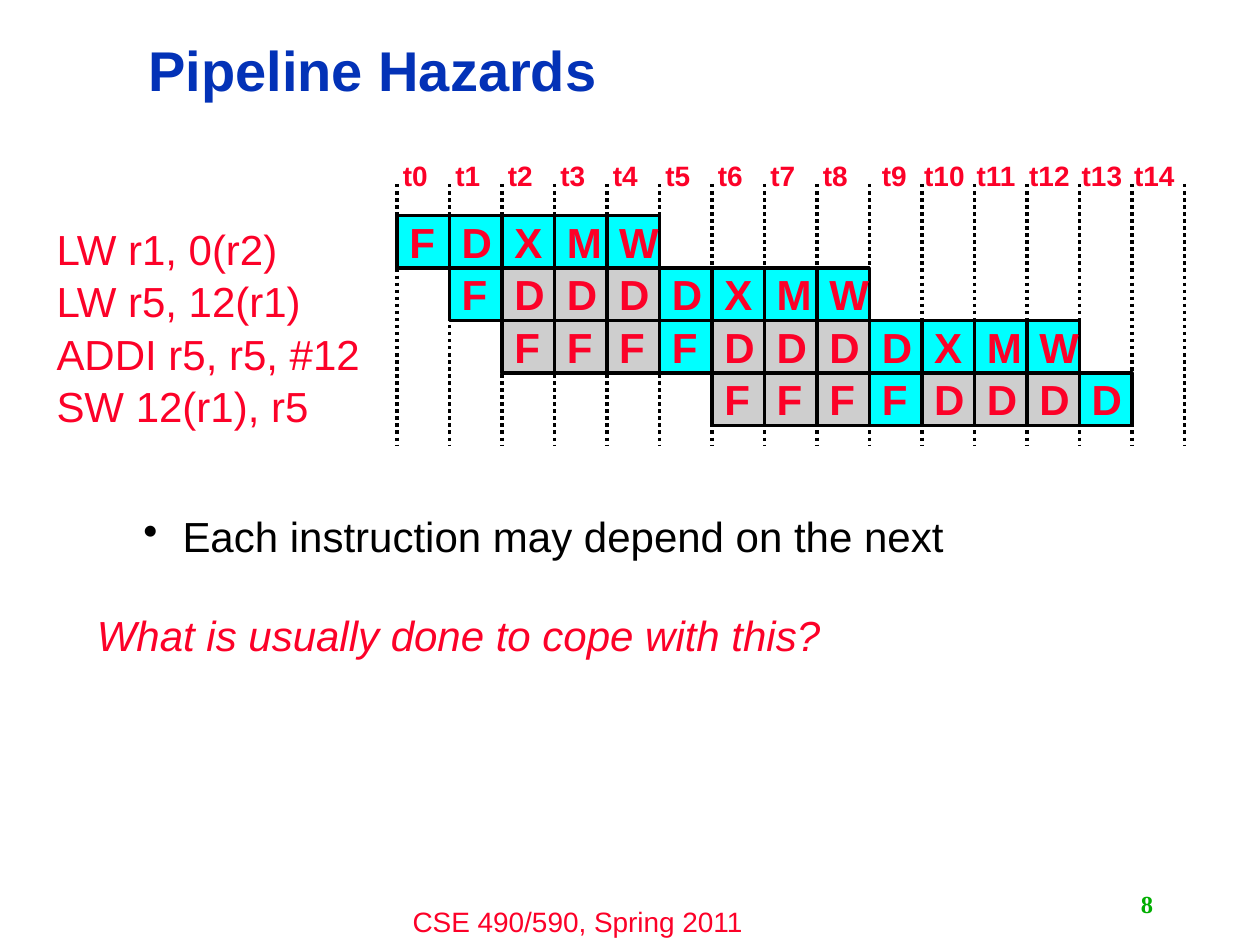
from pptx import Presentation
from pptx.dml.color import RGBColor
from pptx.enum.dml import MSO_LINE
from pptx.enum.shapes import MSO_CONNECTOR, MSO_SHAPE
from pptx.enum.text import MSO_ANCHOR, PP_ALIGN
from pptx.oxml.ns import qn
from pptx.util import Inches, Pt
from lxml import etree

RED = RGBColor(0xFC, 0x01, 0x28)
BLUE = RGBColor(0x03, 0x32, 0xB7)
GREEN = RGBColor(0x00, 0xAE, 0x00)
BLACK = RGBColor(0x00, 0x00, 0x00)
CYAN = RGBColor(0x00, 0xFF, 0xFF)
GREY = RGBColor(0xCE, 0xCE, 0xCE)

DOTTED = MSO_LINE.ROUND_DOT
STRAIGHT = MSO_CONNECTOR.STRAIGHT
RECTANGLE = MSO_SHAPE.RECTANGLE
TOP, MIDDLE = MSO_ANCHOR.TOP, MSO_ANCHOR.MIDDLE
LEFT, CENTER, RIGHT = PP_ALIGN.LEFT, PP_ALIGN.CENTER, PP_ALIGN.RIGHT

CELL = 5 / 12
CYCLES = 15
# Instruction, first cycle, and the stage it occupies in each cycle
PIPELINE = [
    ("LW r1, 0(r2)", 0, "FDXMW"),
    ("LW r5, 12(r1)", 1, "FDDDDXMW"),
    ("ADDI r5, r5, #12", 2, "FFFFDDDDXMW"),
    ("SW 12(r1), r5", 6, "FFFFDDDD"),
]


def write(shape, lines, size, color=RED, font="Arial", bold=False, italic=False,
          align=LEFT, anchor=TOP, wrap=True, spacing=None):
    frame = shape.text_frame
    frame.word_wrap = wrap
    frame.vertical_anchor = anchor
    frame.text = "\n".join(lines)
    for paragraph in frame.paragraphs:
        paragraph.alignment = align
        paragraph.line_spacing = spacing
        paragraph.font.size = Pt(size)
        paragraph.font.name = font
        paragraph.font.bold = bold
        paragraph.font.italic = italic
        paragraph.font.color.rgb = color


def add_text(slide, box, lines, size, **style):
    shape = slide.shapes.add_textbox(*map(Inches, box))
    write(shape, lines, size, **style)
    return shape


def hang_indent(shape, bullet=None):
    properties = shape.text_frame.paragraphs[0]._p.get_or_add_pPr()
    properties.set("marL", str(Inches(0.31)))
    properties.set("indent", str(-Inches(0.31)))
    if bullet:
        etree.SubElement(properties, qn("a:buChar")).set("char", bullet)


def add_stage(slide, left, top, stage, stalled):
    shape = slide.shapes.add_shape(RECTANGLE, *map(Inches, (left, top, CELL, CELL)))
    shape.shadow.inherit = False
    shape.fill.solid()
    shape.fill.fore_color.rgb = GREY if stalled else CYAN
    shape.line.color.rgb = BLACK
    shape.line.width = Pt(2)
    write(shape, [stage], 24, bold=True, anchor=MIDDLE, wrap=False)


def add_clock_edge(slide, x, top, bottom):
    line = slide.shapes.add_connector(STRAIGHT, *map(Inches, (x, top, x, bottom)))
    line.line.color.rgb = BLACK
    line.line.width = Pt(2)
    line.line.dash_style = DOTTED
    etree.SubElement(line._element.spPr, qn("a:effectLst"))


def add_timeline(slide, left, top):
    """Draw cycle labels, clock edges and stage cells from the grid's corner."""
    for row, (_, start, stages) in enumerate(PIPELINE):
        for step, stage in enumerate(stages):
            stalled = stages[step + 1:step + 2] == stage
            add_stage(slide, left + (start + step) * CELL, top + row * CELL,
                      stage, stalled)
    for cycle in range(CYCLES + 1):
        add_clock_edge(slide, left + cycle * CELL, top - 0.25, top + 4.4 * CELL)
    for cycle in range(CYCLES):
        shift, width = (-0.05, 0.4) if cycle < 9 else (0, 0.4) if cycle == 9 else (-0.08, 0.52)
        add_text(slide, (left + cycle * CELL + shift, top - 0.5, width, 0.37),
                 [f"t{cycle}"], 16, bold=True, wrap=False)


def add_body(slide, left, top):
    statement = add_text(slide, (left + 0.37, top, 7.31, 0.7),
                         ["Each instruction may depend on the next"], 24,
                         color=BLACK, spacing=0.9)
    hang_indent(statement, "•")
    question = add_text(slide, (left, top + 0.78, 8.29, 1.75),
                        ["What is usually done to cope with this?"], 24,
                        italic=True, spacing=0.9)
    hang_indent(question)


def add_footer(slide, top):
    add_text(slide, (2.92, top + 0.12, 3.33, 0.37), ["CSE 490/590, Spring 2011"],
             16, align=CENTER)
    add_text(slide, (7.17, top, 2.08, 0.32), ["8"], 14, color=GREEN,
             font="Times New Roman", bold=True, align=RIGHT, anchor=MIDDLE)


def main():
    presentation = Presentation()
    presentation.slide_width, presentation.slide_height = Inches(10), Inches(7.5)
    slide = presentation.slides.add_slide(presentation.slide_layouts[6])
    add_text(slide, (1.08, 0.17, 7.83, 0.83), ["Pipeline Hazards"], 32,
             color=BLUE, bold=True, anchor=MIDDLE, spacing=0.9)
    add_text(slide, (0.35, 1.71, 2.61, 1.7), [row[0] for row in PIPELINE], 24,
             wrap=False, spacing=1.04)
    add_timeline(slide, 3.15, 1.71)
    add_body(slide, 0.67, 4.05)
    add_footer(slide, 7.01)
    presentation.save("out.pptx")


if __name__ == "__main__":
    main()
